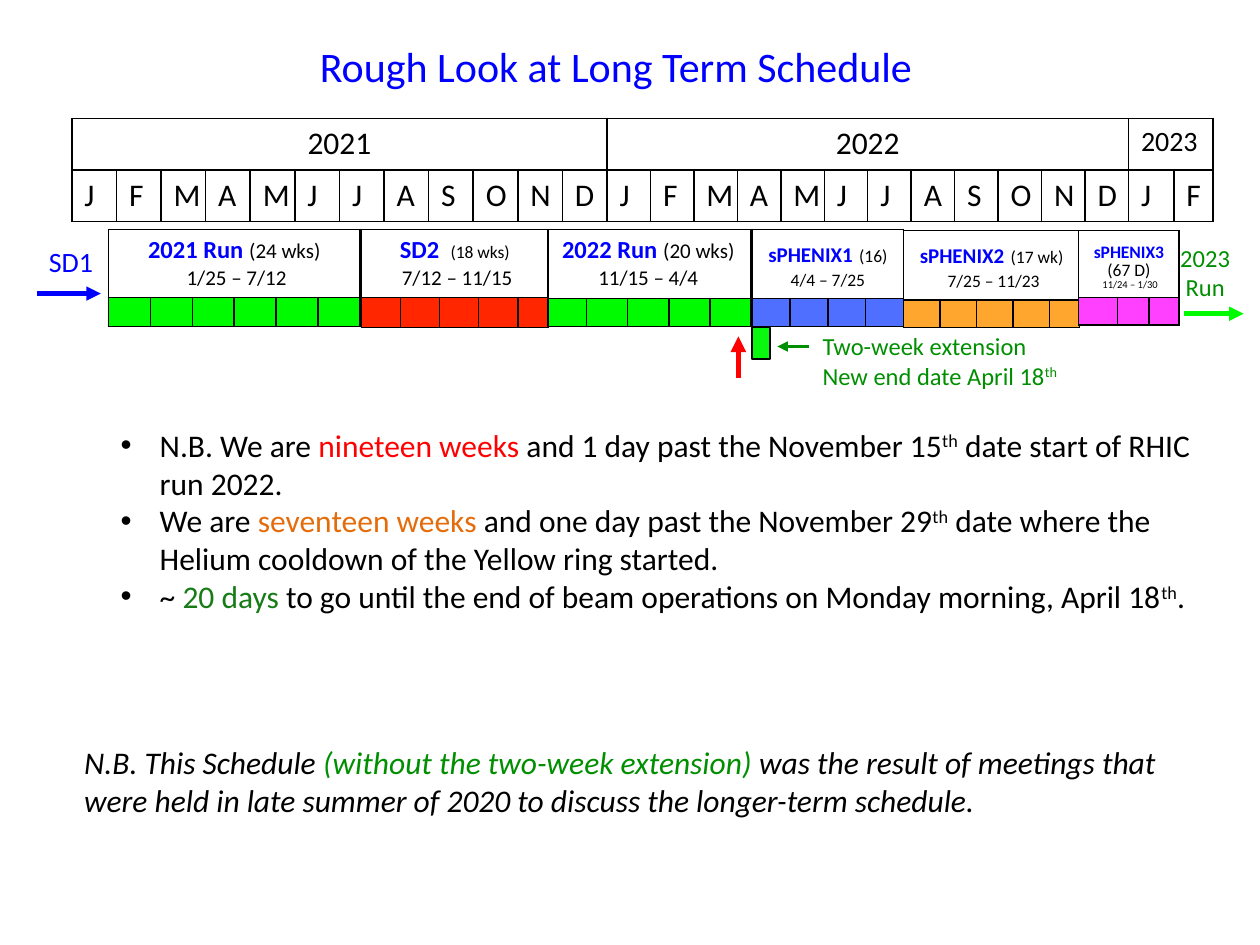
"""Build a one-page long term run schedule with timeline tables and notes."""
from lxml import etree
from pptx import Presentation
from pptx.dml.color import RGBColor
from pptx.enum.shapes import MSO_CONNECTOR, MSO_SHAPE
from pptx.enum.text import PP_ALIGN
from pptx.oxml.ns import qn
from pptx.util import Inches, Pt

LEFT, MID = PP_ALIGN.LEFT, PP_ALIGN.CENTER
RECT, LINE = MSO_SHAPE.RECTANGLE, MSO_CONNECTOR.STRAIGHT
THEME = {
    "font": "Calibri",
    "ink": {
        "black": "000000", "white": "FFFFFF", "blue": "0000FF", "red": "FF0000",
        "green": "008F00", "leaf": "177C16", "amber": "E46C0A", "lime": "00FA00",
        "mint": "08F90D", "flame": "FF2600", "azure": "0432FF", "gold": "FF9300",
        "pink": "FF40FF",
    },
    "size": {"title": 24, "body": 18, "label": 16, "run": 14, "note": 12,
             "small": 10, "micro": 6},
}
INK = {name: RGBColor.from_string(code) for name, code in THEME["ink"].items()}
SIZE = {name: Pt(size) for name, size in THEME["size"].items()}

prs = Presentation()
prs.slide_width, prs.slide_height = Inches(10), Inches(7.5)
COL = prs.slide_width // 10
slide = prs.slides.add_slide(prs.slide_layouts[6])
shapes = slide.shapes


def write(frame, paras, align=LEFT, space=None):
    for i, runs in enumerate(paras):
        para = frame.paragraphs[0] if i == 0 else frame.add_paragraph()
        para.alignment = align
        if space:
            para.line_spacing = space
        for text, size, ink, *style in runs:
            run = para.add_run()
            run.text = text
            look = {"name": THEME["font"], "size": SIZE[size],
                    "bold": "bold" in style, "italic": "italic" in style}
            for key, value in look.items():
                setattr(run.font, key, value)
            run.font.color.rgb = INK[ink]
            if "super" in style:
                run.font._element.set("baseline", "30000")


def grid(left, top, cols, rows):
    box = [int(v * COL) for v in (left, top, sum(cols), sum(rows))]
    table = shapes.add_table(len(rows), len(cols), *box).table
    table.first_row = table.horz_banding = False
    for col, width in zip(table.columns, cols):
        col.width = int(width * COL)
    for row, height in zip(table.rows, rows):
        row.height = int(height * COL)
    for cell in table.iter_cells():
        cell.fill.solid()
        cell.fill.fore_color.rgb = INK["white"]
        props = cell._tc.get_or_add_tcPr()
        for i, side in enumerate(("lnL", "lnR", "lnT", "lnB")):
            edge = etree.Element(qn("a:" + side), w=str(Pt(1)))
            fill = etree.SubElement(edge, qn("a:solidFill"))
            etree.SubElement(fill, qn("a:srgbClr"), val=THEME["ink"]["black"])
            props.insert(i, edge)
    return table


YEARS = [("2021", 12, "body", MID), ("2022", 12, "body", MID), ("2023", 2, "label", LEFT)]
MONTHS = "JFMAMJJASOND" * 2 + "JF"
widths = [4.25 / 12] * 12 + [4.14 / 12] * 12 + [0.36, 0.31]
dates = grid(0.57, 0.94, widths, [0.41, 0.41])
start = 0
for year, count, size, align in YEARS:
    head = dates.cell(0, start)
    head.merge(dates.cell(0, start + count - 1))
    write(head.text_frame, [[(year, size, "black")]], align)
    start += count
for i, month in enumerate(MONTHS):
    write(dates.cell(1, i).text_frame, [[(month, "body", "black")]])

GAP = (" ", "label", "blue", "bold")
RUNS = [
    (0.86, 1.82, [2 / 6] * 6, [0.54, 0.23], "lime", 100, None, [
        [("2021 Run ", "run", "blue", "bold"), ("(24 wks)", "note", "black")],
        [(" 1/25 – 7/12", "note", "black")]]),
    (4.33, 1.82, [1.63 / 5] * 5, [0.55, 0.22], "lime", 100, None, [
        [("2022 Run ", "run", "blue", "bold"), ("(20 wks) 11/15 – 4/4", "note", "black")]]),
    (2.87, 1.82, [0.31] * 4 + [0.23], [0.53, 0.24], "flame", 100, None, [
        [("SD2  ", "run", "blue", "bold"), ("(18 wks)", "small", "black")],
        [(" 7/12 – 11/15", "note", "black")]]),
    (5.97, 1.82, [0.3] * 4, [0.55, 0.22], "azure", 70, None, [
        [("sPHENIX1", "note", "blue", "bold"), GAP, ("(16) 4/4 – 7/25", "small", "black")]]),
    (7.17, 1.83, [0.29] * 4 + [0.23], [0.55, 0.22], "gold", 82, None, [
        [("sPHENIX2", "note", "blue", "bold"), GAP, ("(17 wk)", "small", "black")],
        [(" 7/25 – 11/23", "small", "black")]]),
    (8.56, 1.83, [0.31, 0.25, 0.23], [0.53, 0.22], "pink", 100, 0.78, [
        [("sPHENIX3", "small", "blue", "bold"), GAP, ("(67 D)", "small", "black")],
        [(" 11/24 – 1/30", "micro", "black")]]),
]
for left, top, cols, rows, ink, alpha, space, paras in RUNS:
    table = grid(left, top, cols, rows)
    head = table.cell(0, 0)
    head.merge(table.cell(0, len(cols) - 1))
    write(head.text_frame, paras, MID, space)
    for i in range(len(cols)):
        cell = table.cell(1, i)
        cell.fill.fore_color.rgb = INK[ink]
        tone = cell._tc.tcPr.find(qn("a:solidFill"))[0]
        if alpha < 100:
            etree.SubElement(tone, qn("a:alpha"), val=str(alpha * 1000))
        para = cell.text_frame.paragraphs[0]._p
        etree.SubElement(para, qn("a:endParaRPr"), sz=str(THEME["size"]["micro"] * 100))

TEXTS = [
    (0.29, 1.89, 0.56, 0.37, False, LEFT, [[("SD1", "label", "blue")]]),
    (2.44, 0.27, 5.13, 0.5, True, LEFT,
     [[("Rough Look at Long Term Schedule", "title", "blue")]]),
    (9.2, 1.88, 0.73, 0.57, True, MID,
     [[("2023", "run", "green")], [("Run", "run", "green")]]),
    (0.57, 5.85, 8.93, 0.71, True, LEFT, [[
        ("N.B. This Schedule ", "body", "black", "italic"),
        ("(without the two-week extension)", "body", "green", "italic"),
        (" was the result of meetings that were held in late summer of 2020 "
         "to discuss the longer-term schedule.", "body", "black", "italic")]]),
    (6.43, 2.58, 2.9, 0.57, True, LEFT, [
        [("Two-week extension", "run", "green")],
        [("New end date April 18", "run", "green"), ("th", "run", "green", "super")]]),
    (0.86, 3.33, 8.73, 1.62, True, LEFT, [
        [("N.B. We are ", "body", "black"), ("nineteen weeks ", "body", "red"),
         ("and 1 day past the November 15", "body", "black"),
         ("th", "body", "black", "super"),
         (" date start of RHIC run 2022.", "body", "black")],
        [("We are ", "body", "black"), ("seventeen weeks ", "body", "amber"),
         ("and one day past the November 29", "body", "black"),
         ("th", "body", "black", "super"),
         (" date where the Helium cooldown of the Yellow ring started.", "body", "black")],
        [("~ ", "body", "black"), ("20 days ", "body", "leaf"),
         ("to go until the end of beam operations on Monday morning, April 18",
          "body", "black"),
         ("th", "body", "black", "super"), (".", "body", "black")]]),
]
for *place, wrap, align, paras in TEXTS:
    box = shapes.add_textbox(*[int(v * COL) for v in place])
    box.text_frame.word_wrap = wrap
    write(box.text_frame, paras, align)
for para in box.text_frame.paragraphs:
    props = para._p.get_or_add_pPr()
    props.set("marL", str(Inches(0.31)))
    props.set("indent", str(-Inches(0.31)))
    etree.SubElement(props, qn("a:buFont"), typeface="Arial")
    etree.SubElement(props, qn("a:buChar"), char="•")

block = shapes.add_shape(RECT, *[int(v * COL) for v in (5.97, 2.6, 0.14, 0.25)])
block.shadow.inherit = False
block.fill.solid()
block.fill.fore_color.rgb = INK["mint"]
block.line.color.rgb = INK["black"]
block.line.width = Pt(1)

ARROWS = [
    (0.29, 2.33, 0.8, 2.33, "blue", 2.75),
    (9.4, 2.49, 9.87, 2.49, "lime", 2.75),
    (5.86, 3, 5.86, 2.67, "red", 3),
    (6.42, 2.75, 6.17, 2.75, "green", 1.5),
]
for *ends, ink, width in ARROWS:
    arrow = shapes.add_connector(LINE, *[int(v * COL) for v in ends])
    arrow.line.color.rgb = INK[ink]
    arrow.line.width = Pt(width)
    etree.SubElement(arrow.line._get_or_add_ln(), qn("a:tailEnd"), type="triangle")
    etree.SubElement(arrow._element.spPr, qn("a:effectLst"))

prs.save("out.pptx")
